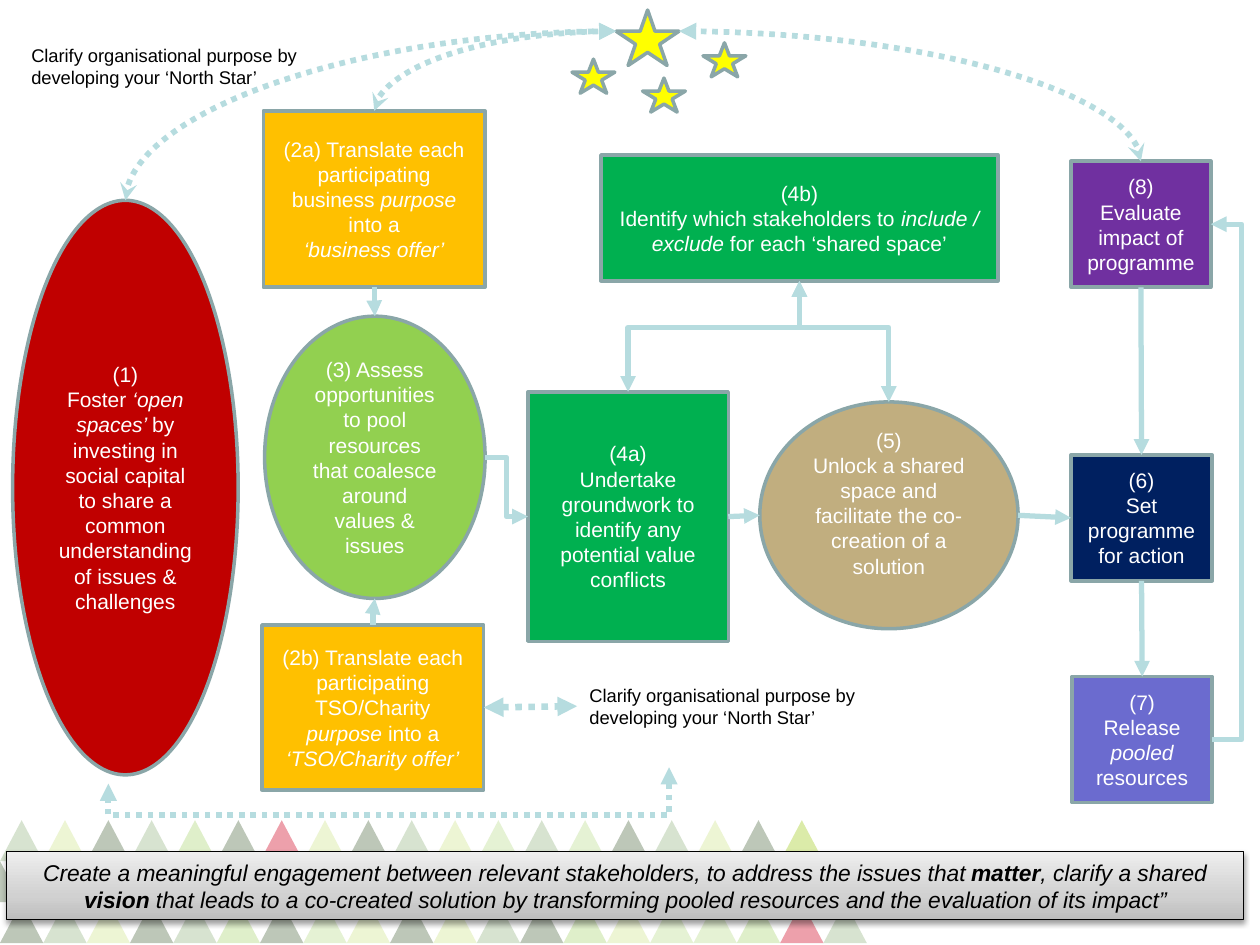
from collections import namedtuple

from lxml import etree
from pptx import Presentation
from pptx.dml.color import RGBColor
from pptx.enum.dml import MSO_LINE
from pptx.enum.shapes import MSO_CONNECTOR, MSO_SHAPE
from pptx.enum.text import MSO_ANCHOR, PP_ALIGN
from pptx.oxml import parse_xml
from pptx.oxml.ns import nsdecls, qn
from pptx.util import Inches, Pt

RECT, OVAL = MSO_SHAPE.RECTANGLE, MSO_SHAPE.OVAL
STAR, TRIANGLE = MSO_SHAPE.STAR_5_POINT, MSO_SHAPE.ISOSCELES_TRIANGLE
STRAIGHT, ELBOW, CURVE = MSO_CONNECTOR.STRAIGHT, MSO_CONNECTOR.ELBOW, MSO_CONNECTOR.CURVE
CENTER, LEFT_ALIGN = PP_ALIGN.CENTER, PP_ALIGN.LEFT
MIDDLE, DOTTED = MSO_ANCHOR.MIDDLE, MSO_LINE.ROUND_DOT
TOP, LEFT, BOTTOM, RIGHT = range(4)

# The slide is a grid of 100 columns by 75 rows of square cells
COLUMNS, ROWS = 100, 75
CELL = Inches(0.1)
OUTLINE, ARROW, WHITE, BLACK = "8AA6A8", "B6DCDF", "FFFFFF", "000000"
ORANGE, GREEN, YELLOW = "FFC000", "00B050", "FFFF00"
NORTH_STAR = "Clarify organisational purpose by developing your ‘North Star’"

# Triangle tints: colour and opacity in percent
TINTS = {"D": ("264715", 30), "R": ("D3122E", 40), "G": ("4A812C", 22), "L": ("A7CD28", 20),
         "B": ("A7CD28", 40), "S": ("81C12C", 25), "T": ("81C12C", 20)}
TRIANGLE_ROWS = [(0, "GLDGSDRLDGLTGTDGLDB"), (-0.5, "DSRTLDLGDTSDDSDSGDGL"),
                 (0, "DGLDGSDTLDLGDSLTTSRG")]

Box = namedtuple("Box", "left top width height")


def within(area, left, top, width, height):
    return Box(area.left + left, area.top + top, width, height)


def cells(*values):
    return [round(value * CELL) for value in values]


def color(value):
    return RGBColor.from_string(value)


def write(shape, paragraphs, size, ink, align, italic=False, bold_marks=False):
    """Fill a shape with paragraphs; text between asterisks is emphasised."""
    frame = shape.text_frame
    frame.word_wrap = True
    for index, text in enumerate(paragraphs):
        para = frame.paragraphs[0] if index == 0 else frame.add_paragraph()
        para.alignment = align
        for part, words in enumerate(text.split("*")):
            if words:
                marked = part % 2 == 1
                span = para.add_run()
                span.text = words
                span.font.name, span.font.size = "Arial", Pt(size)
                span.font.color.rgb = color(ink)
                span.font.italic = italic or marked
                span.font.bold = marked and bold_marks


def add_figure(page, kind, box, fill, paragraphs=()):
    shape = page.shapes.add_shape(kind, *cells(*box))
    shape.shadow.inherit = False
    shape.fill.solid()
    shape.fill.fore_color.rgb = color(fill)
    shape.line.color.rgb = color(OUTLINE)
    shape.line.width = Pt(2)
    shape.text_frame.vertical_anchor = MIDDLE
    write(shape, paragraphs, 12, WHITE, CENTER)
    return shape


def add_note(page, box):
    note = page.shapes.add_textbox(*cells(*box))
    write(note, [NORTH_STAR], 10.5, BLACK, LEFT_ALIGN)
    return note


def end_point(end):
    """An end is a (shape, side) pair or a pair of grid positions."""
    if not hasattr(end[0], "left"):
        return cells(*end)
    shape, side = end
    across, down = [(0.5, 0), (0, 0.5), (0.5, 1), (1, 0.5)][side]
    return round(shape.left + shape.width * across), round(shape.top + shape.height * down)


def is_rectangle(shape):
    return shape._element.spPr.find(qn("a:prstGeom")).get("prst") == "rect"


def style_line(connector, width, dotted, head, tail):
    connector.line.color.rgb = color(ARROW)
    connector.line.width = Pt(width)
    if dotted:
        connector.line.dash_style = DOTTED
    properties = connector._element.spPr
    for tag, arrow in (("a:headEnd", head), ("a:tailEnd", tail)):
        if arrow:
            etree.SubElement(properties.find(qn("a:ln")), qn(tag), type=arrow)
    etree.SubElement(properties, qn("a:effectLst"))


def straight(page, start, end, width=3, dotted=False, head=None):
    connector = page.shapes.add_connector(STRAIGHT, *end_point(start), *end_point(end))
    for target, join in ((start, connector.begin_connect), (end, connector.end_connect)):
        if hasattr(target[0], "left") and is_rectangle(target[0]):
            join(*target)
    style_line(connector, width, dotted, head, "triangle")


def routed(page, start, end, kind=ELBOW, vertical=True, turn=None, width=3, dotted=False, head=None):
    """Elbow or quarter curve; turn is the grid position of the middle leg."""
    (x1, y1), (x2, y2) = end_point(start), end_point(end)
    along, aside = (y2 - y1, x1 - x2) if vertical else (x2 - x1, y2 - y1)
    left, top = (x1 + x2 - abs(along)) // 2, (y1 + y2 - abs(aside)) // 2
    connector = page.shapes.add_connector(kind, left, top, left + abs(along), top + abs(aside))
    frame = connector._element.spPr.find(qn("a:xfrm"))
    if vertical:
        frame.set("rot", "5400000")
    for name, distance in (("flipH", along), ("flipV", aside)):
        if distance < 0:
            frame.set(name, "1")
    geometry = connector._element.spPr.find(qn("a:prstGeom"))
    if kind == CURVE:
        geometry.set("prst", "curvedConnector2")
    if turn is not None:
        share = (turn * CELL - (y1 if vertical else x1)) / along
        etree.SubElement(geometry.find(qn("a:avLst")), qn("a:gd"),
                         name="adj1", fmla=f"val {round(share * 100000)}")
    style_line(connector, width, dotted, head, "triangle")


def triangle_band(page, area):
    step, pitch = area.width / 20, area.height / 3
    for row, (shift, tints) in enumerate(TRIANGLE_ROWS):
        for column, key in enumerate(tints):
            box = within(area, (column + shift) * step, row * pitch, step, pitch)
            tint, opacity = TINTS[key]
            shape = add_figure(page, TRIANGLE, box, tint)
            shape.line.fill.background()
            ink = shape._element.spPr.find(".//" + qn("a:srgbClr"))
            etree.SubElement(ink, qn("a:alpha"), val=str(opacity * 1000))


def star_cluster(page, area):
    """Draw the stars and return the side tips of the large one."""
    big = within(area, 3.5, 0, 5, 4.4)
    add_figure(page, STAR, big, YELLOW)
    for left, top in ((10.4, 2.6), (5.6, 5.4), (0, 3.9)):
        add_figure(page, STAR, within(area, left, top, 3.4, 2.7), YELLOW)
    tip = big.top + 0.38 * big.height
    return (big.left, tip), (big.left + big.width, tip)


def offers(page, area):
    business = add_figure(page, RECT, within(area, 0.1, 0, 17.6, 14), ORANGE, [
        "(2a) Translate each participating business *purpose* into a", "*‘business offer’*"])
    charity = add_figure(page, RECT, within(area, 0, 40.8, 17.6, 13.1), ORANGE, [
        "(2b) Translate each participating TSO/Charity *purpose* into a", "*‘TSO/Charity offer’*"])
    assess = add_figure(page, OVAL, within(area, 0.2, 16.3, 17.5, 22.4), "92D050", [
        "(3) Assess opportunities to pool resources", "that coalesce around values & issues"])
    routed(page, (business, BOTTOM), (assess, TOP))
    routed(page, (charity, TOP), (assess, BOTTOM))
    return business, charity, assess


def shared_space(page, area):
    groundwork = add_figure(page, RECT, within(area, 0, 18.8, 15.9, 19.8), GREEN, [
        "(4a)", "Undertake groundwork to identify any potential value conflicts"])
    unlock = add_figure(page, OVAL, within(area, 18.4, 19.6, 20.5, 18), "C1AE7F", [
        "(5)", "Unlock a shared space and facilitate the co-creation of a solution"])
    unlock.text_frame.margin_bottom = Inches(0.25)
    stakeholders = add_figure(page, RECT, within(area, 5.8, 0, 31.5, 10), GREEN, [
        "(4b)", "Identify which stakeholders to *include / exclude* for each ‘shared space’"])
    for step in (groundwork, unlock):
        routed(page, (step, TOP), (stakeholders, BOTTOM), turn=area.top + 13.7, head="triangle")
    straight(page, (groundwork, RIGHT), (unlock, LEFT))
    return groundwork, unlock


def programme(page, area):
    steps = [(0, "7030A0", ["(8)", "Evaluate impact of programme"]),
             (23.3, "002060", ["(6)", "Set programme for action"]),
             (40.9, "6B6BCF", ["(7)", "Release *pooled* resources"])]
    evaluate, plan, release = [
        add_figure(page, RECT, within(area, 0, top, 11.1, 10), fill, text)
        for top, fill, text in steps]
    release.left += Inches(0.01)
    plan.width += Inches(0.01)
    straight(page, (evaluate, BOTTOM), (plan, TOP))
    straight(page, (plan, BOTTOM), (release, TOP))
    routed(page, (release, RIGHT), (evaluate, RIGHT), vertical=False, turn=area.left + area.width)
    return evaluate, plan


def banner(page, area):
    shape = add_figure(page, RECT, area, WHITE)
    shape.line.color.rgb = color(BLACK)
    shape.line.width = Pt(0.75)
    write(shape, ["Create a meaningful engagement between relevant stakeholders, to address the issues "
                  "that *matter*, clarify a shared *vision* that leads to a co-created solution by "
                  "transforming pooled resources and the evaluation of its impact”"],
          13, BLACK, CENTER, italic=True, bold_marks=True)
    properties = shape._element.spPr
    stops = "".join(f'<a:gs pos="{place * 1000}"><a:srgbClr val="{tint}"/></a:gs>'
                    for place, tint in ((0, "BDBDBD"), (35, "D1D1D1"), (100, "EEEEEE")))
    properties.replace(properties.find(qn("a:solidFill")), parse_xml(
        f'<a:gradFill {nsdecls("a")}><a:gsLst>{stops}</a:gsLst>'
        '<a:lin ang="16200000" scaled="0"/></a:gradFill>'))
    properties.find(qn("a:effectLst")).append(parse_xml(
        f'<a:outerShdw {nsdecls("a")} blurRad="{Pt(3.1)}" dist="{Pt(1.6)}" dir="5400000" '
        'rotWithShape="0"><a:srgbClr val="000000"><a:alpha val="38000"/></a:srgbClr></a:outerShdw>'))


def main():
    deck = Presentation()
    deck.slide_width, deck.slide_height = cells(COLUMNS, ROWS)
    page = deck.slides.add_slide(deck.slide_layouts[6])

    # Regions
    triangle_band(page, Box(0, 65.1, 68.8, 9.75))
    foster = add_figure(page, OVAL, Box(1, 15.9, 17.9, 45.6), "C00000", [
        "(1)", "Foster *‘open*", "*spaces’ *by investing in social capital to share a common "
        "understanding of issues & challenges"])
    left_tip, right_tip = star_cluster(page, Box(45.4, 0.8, 13.8, 8.1))
    business, charity, assess = offers(page, Box(20.8, 8.8, 17.7, 53.9))
    groundwork, unlock = shared_space(page, Box(41.9, 12.3, 38.9, 38.6))
    evaluate, plan = programme(page, Box(85, 12.8, 13.6, 50.9))
    banner(page, Box(0.5, 67.6, 98.2, 5.4))
    add_note(page, Box(1.5, 3, 24.3, 4.5))
    purpose = add_note(page, Box(45.8, 53.8, 24.3, 4.5))

    # Links between regions
    routed(page, (assess, RIGHT), (groundwork, LEFT), vertical=False)
    straight(page, (unlock, RIGHT), (plan, LEFT))
    for step, tip in ((business, left_tip), (evaluate, right_tip), (foster, left_tip)):
        routed(page, (step, TOP), tip, kind=CURVE, width=3.25, dotted=True, head="stealth")
    straight(page, (charity, RIGHT), (purpose, LEFT), width=3.75, dotted=True, head="triangle")
    routed(page, (53.1, 60.9), (8.6, 62.2), turn=64.7, width=3.25, dotted=True, head="triangle")

    deck.save("out.pptx")


if __name__ == "__main__":
    main()
